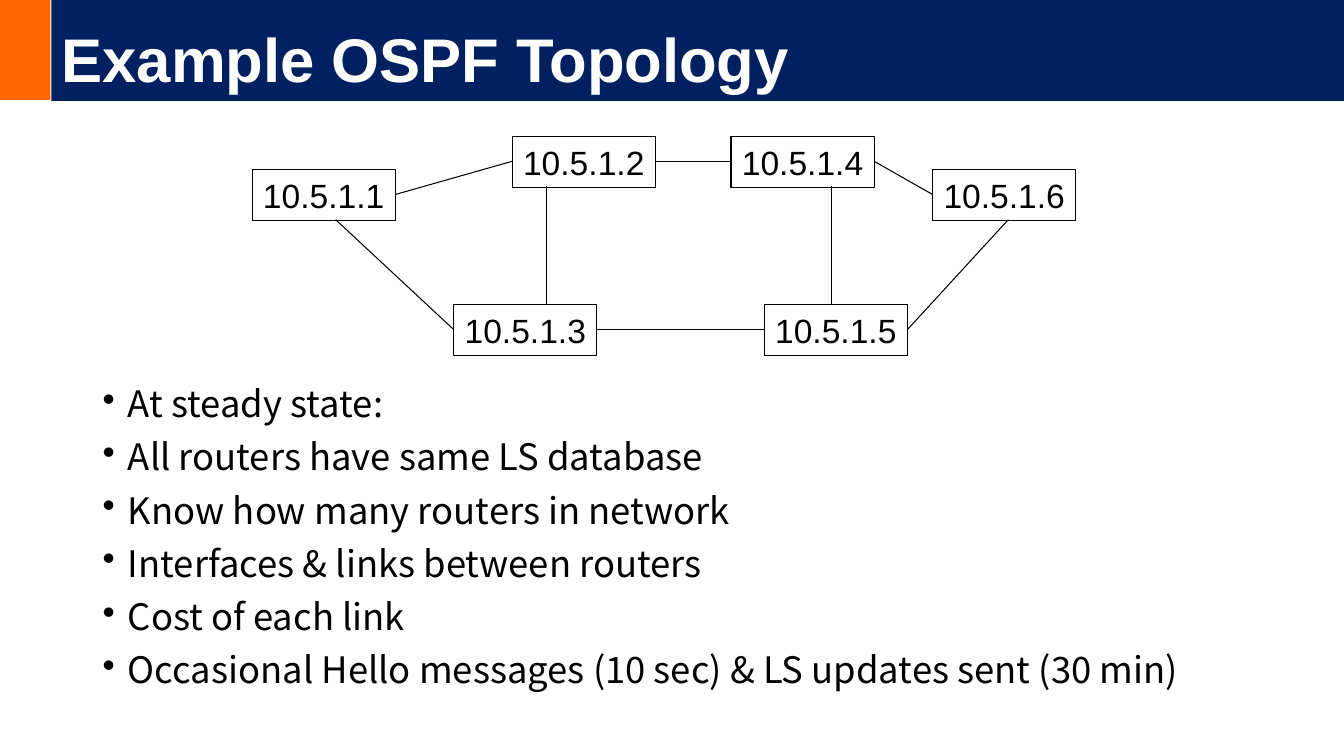
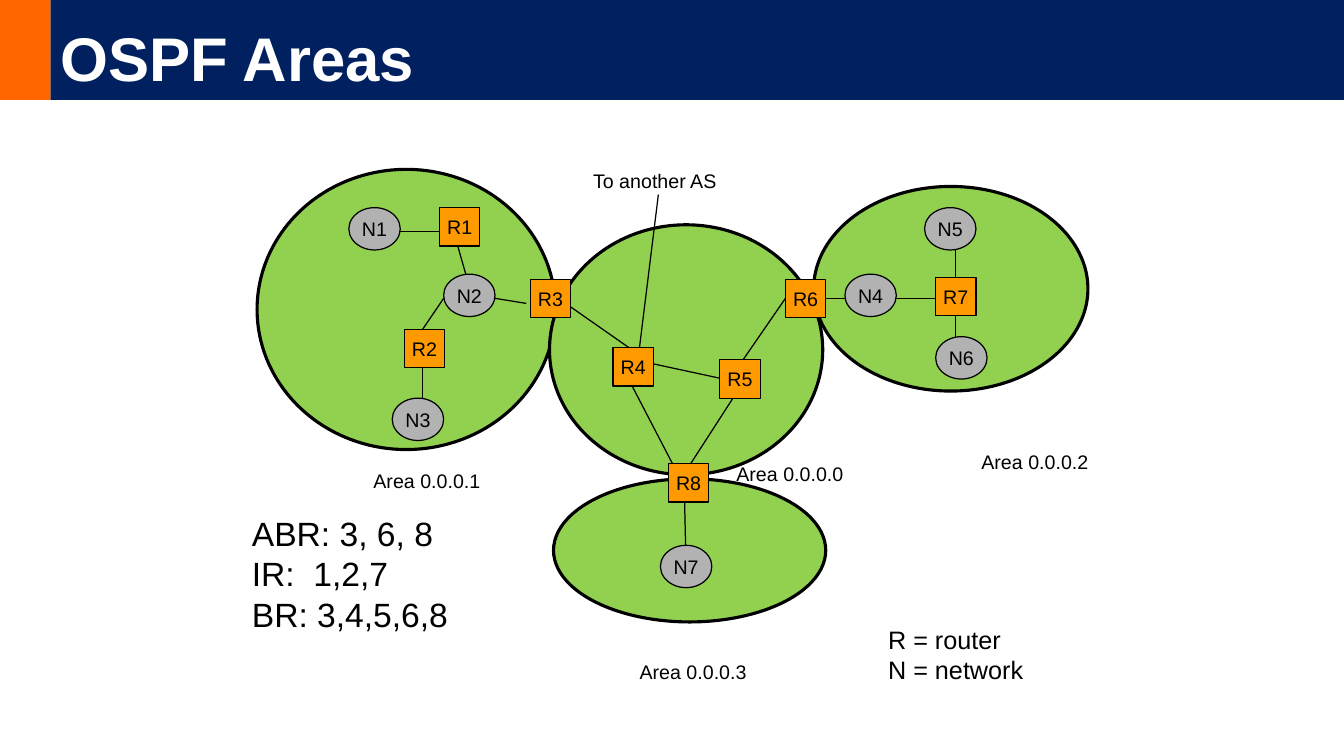
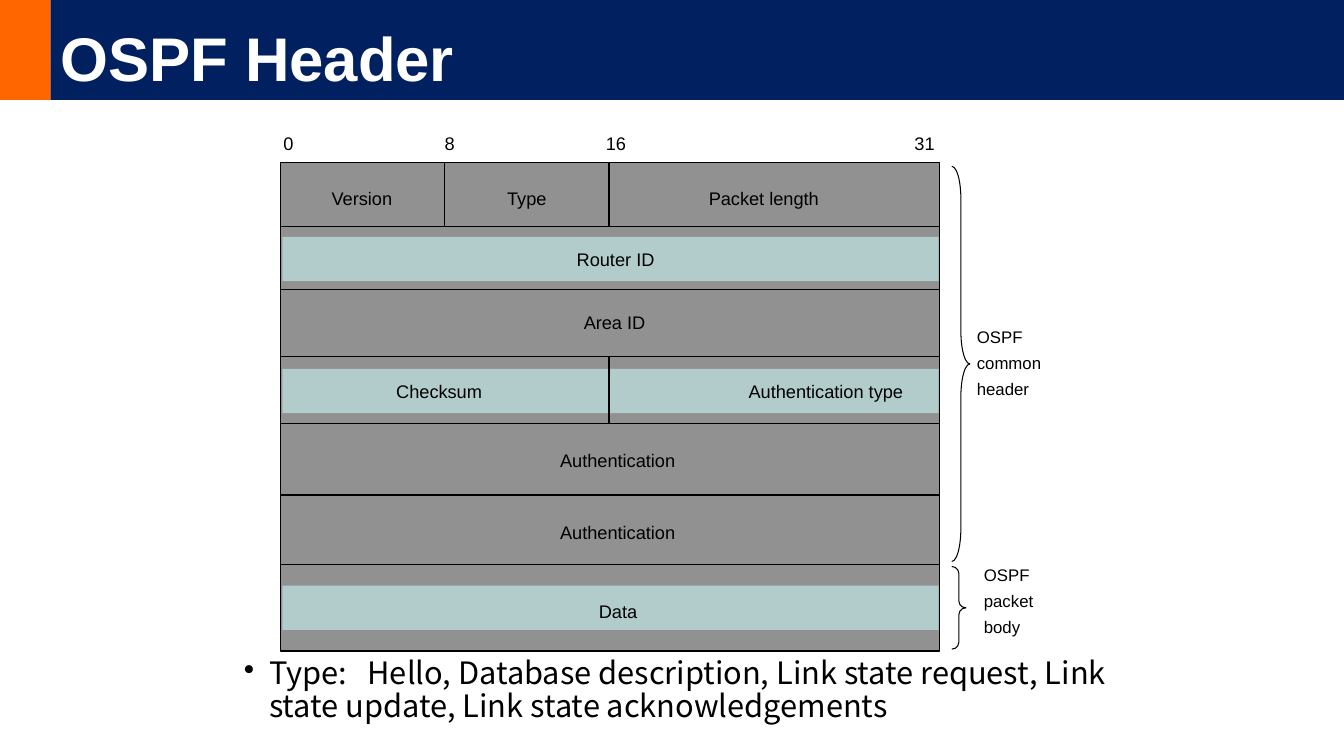
"""Build three slides on OSPF: topology, areas and packet header."""
from dataclasses import dataclass

from lxml import etree
from pptx import Presentation
from pptx import util as u
from pptx.dml.color import RGBColor
from pptx.enum import shapes, text
from pptx.oxml import ns

PX = 9144
TITLE_ONLY = 5
BOX = shapes.MSO_SHAPE.RECTANGLE
OVAL = shapes.MSO_SHAPE.OVAL
BRACE = shapes.MSO_SHAPE.RIGHT_BRACE
LEFT, CENTER = text.PP_ALIGN.LEFT, text.PP_ALIGN.CENTER
TOP, MIDDLE, BOTTOM = (text.MSO_ANCHOR.TOP, text.MSO_ANCHOR.MIDDLE,
                       text.MSO_ANCHOR.BOTTOM)


@dataclass(frozen=True)
class Theme:
    """Colours, fonts, type sizes and line widths."""
    accent: str = "FF6600"
    band: str = "002060"
    white: str = "FFFFFF"
    ink: str = "000000"
    area: str = "92D050"
    router: str = "FF9900"
    network: str = "B2B2B2"
    packet: str = "919191"
    strip: str = "B1CCCB"
    sans: str = "Arial"
    body: str = "Noto Sans CJK KR"
    title_pt: int = 44
    bullet_pt: int = 26
    note_pt: int = 22
    address_pt: int = 24
    legend_pt: int = 18
    label_pt: int = 14
    field_pt: int = 13
    brace_pt: int = 12
    thin: float = 0.75
    rule: float = 0.88
    bold_rule: float = 2.25


THEME = Theme()


def px(*lengths):
    """Turn px lengths into EMU."""
    return [u.Emu(length * PX) for length in lengths]


def write(frame, lines, size, color=THEME.ink, font=THEME.sans, align=LEFT,
          anchor=TOP, wrap=True, inset=True, bold=False, spacing=None,
          before=0):
    """Fill a text frame with one paragraph per line."""
    frame.auto_size = text.MSO_AUTO_SIZE.NONE
    frame.word_wrap = wrap
    frame.vertical_anchor = anchor
    if not inset:
        frame.margin_left = frame.margin_right = 0
        frame.margin_top = frame.margin_bottom = 0
    frame.text = "\n".join(lines)
    for paragraph in frame.paragraphs:
        paragraph.alignment = align
        paragraph.line_spacing = spacing
        paragraph.space_before = u.Pt(before)
        paragraph.font.name = font
        paragraph.font.size = u.Pt(size)
        paragraph.font.bold = bold
        paragraph.font.color.rgb = RGBColor.from_string(color)


def stroke(line, width):
    """Give a line its width and the ink colour."""
    line.width = u.Pt(width)
    line.color.rgb = RGBColor.from_string(THEME.ink)


def paint(shape, color):
    """Fill a shape with a colour, or leave it hollow."""
    if color:
        shape.fill.solid()
        shape.fill.fore_color.rgb = RGBColor.from_string(color)
    else:
        shape.fill.background()


def add_figure(slide, kind, place, color=None, width=None):
    """Add a preset shape without shadow."""
    figure = slide.shapes.add_shape(kind, *px(*place))
    figure.shadow.inherit = False
    paint(figure, color)
    if width:
        stroke(figure.line, width)
    else:
        figure.line.fill.background()
    return figure


def add_links(slide, links, width):
    """Add straight links given as x1, y1, x2, y2."""
    for ends in links:
        link = slide.shapes.add_connector(
            shapes.MSO_CONNECTOR.STRAIGHT, *px(*ends))
        stroke(link.line, width)
        etree.SubElement(link._element.spPr, ns.qn("a:effectLst"))


def add_text(slide, place, lines, size, **style):
    """Add a text box."""
    box = slide.shapes.add_textbox(*px(*place))
    write(box.text_frame, lines, size, **style)
    return box.text_frame


def add_labels(slide, labels, size, height):
    """Add one-line labels given as text, left, top, width."""
    for label, left, top, width in labels:
        add_text(slide, (left, top, width, height), [label], size,
                 align=CENTER, wrap=False, inset=False)


def add_bullets(slide, place, lines, size):
    """Add a bulleted list with hanging indents."""
    frame = add_text(slide, place, lines, size, font=THEME.body,
                     spacing=0.9, before=10)
    indent = px(25)[0]
    for paragraph in frame.paragraphs:
        properties = paragraph._p.get_or_add_pPr()
        properties.set("marL", str(indent))
        properties.set("indent", str(-indent))
        etree.SubElement(properties, ns.qn("a:buChar"), char="•")


def add_slide(deck, heading, band_left=50, band_height=99):
    """Add a slide with the accent block and title band."""
    slide = deck.slides.add_slide(deck.slide_layouts[TITLE_ONLY])
    add_figure(slide, BOX, (0, 0, 50, 99), THEME.accent)
    title = slide.shapes.title
    title.left, title.top, title.width, title.height = px(
        band_left, 0, 1283, band_height)
    paint(title, THEME.band)
    write(title.text_frame, [heading], THEME.title_pt, THEME.white,
          anchor=BOTTOM, bold=True, spacing=0.9)
    return slide


def build_topology(deck):
    """Draw six linked routers above the steady-state list."""
    slide = add_slide(deck, "Example OSPF Topology", 51, 100)
    routers = [(250, 168), (508, 135), (450, 302),
               (725, 135), (758, 302), (925, 168)]
    for number, (left, top) in enumerate(routers, 1):
        router = add_figure(slide, BOX, (left, top, 142, 51),
                            width=THEME.thin)
        write(router.text_frame, [f"10.5.1.{number}"], THEME.address_pt,
              align=CENTER, anchor=MIDDLE, wrap=False)
    add_links(slide, [
        (392, 193, 508, 160), (650, 160, 725, 160), (867, 160, 925, 193),
        (333, 218, 450, 327), (592, 327, 758, 327), (825, 185, 825, 302),
        (900, 327, 1000, 218), (542, 185, 542, 302),
    ], THEME.thin)
    add_bullets(slide, (92, 378, 1172, 325), [
        "At steady state:",
        "All routers have same LS database",
        "Know how many routers in network",
        "Interfaces & links between routers",
        "Cost of each link",
        "Occasional Hello messages (10 sec) & LS updates sent (30 min)",
    ], THEME.bullet_pt)


def add_nodes(slide, kind, size, color, nodes):
    """Add labelled nodes of one kind, given as name, left, top."""
    for name, left, top in nodes:
        node = add_figure(slide, kind, (left, top, *size), color, THEME.rule)
        write(node.text_frame, [name], THEME.label_pt, align=CENTER,
              anchor=MIDDLE, wrap=False, inset=False)


def build_areas(deck):
    """Draw four areas with their routers and networks."""
    slide = add_slide(deck, "OSPF Areas")
    for area in [(255, 168, 296, 278), (807, 185, 272, 203),
                 (545, 223, 271, 248), (549, 475, 270, 142)]:
        add_figure(slide, OVAL, area, THEME.area, THEME.bold_rule)
    add_links(slide, [
        (561, 301, 624, 345), (627, 383, 667, 460), (727, 395, 685, 460),
        (648, 361, 713, 375), (779, 296, 737, 357), (454, 244, 462, 272),
        (419, 327, 440, 296), (522, 301, 491, 296), (397, 230, 437, 230),
        (419, 365, 419, 395), (819, 296, 838, 296), (889, 296, 928, 296),
        (948, 275, 948, 248), (948, 313, 948, 334), (679, 497, 680, 543),
        (634, 347, 653, 193),
    ], THEME.rule)
    add_nodes(slide, BOX, (40, 38), THEME.router, [
        ("R1", 436, 206), ("R2", 401, 327), ("R3", 526, 277),
        ("R4", 608, 345), ("R5", 714, 357), ("R6", 779, 277),
        ("R7", 928, 275), ("R8", 663, 460),
    ])
    add_nodes(slide, OVAL, (51, 42), THEME.network, [
        ("N1", 346, 206), ("N2", 440, 272), ("N3", 389, 395),
        ("N4", 838, 272), ("N5", 917, 206), ("N6", 928, 334),
        ("N7", 655, 541),
    ])
    add_labels(slide, [
        ("Area 0.0.0.0", 730, 458, 107), ("Area 0.0.0.1", 370, 465, 107),
        ("Area 0.0.0.2", 973, 446, 107), ("Area 0.0.0.3", 634, 655, 107),
        ("To another AS", 588, 168, 123),
    ], THEME.label_pt, 24)
    add_text(slide, (240, 504, 230, 131),
             ["ABR: 3, 6, 8", "IR:  1,2,7", "BR: 3,4,5,6,8"],
             THEME.address_pt)
    add_text(slide, (871, 614, 159, 70), ["R = router", "N = network"],
             THEME.legend_pt, anchor=MIDDLE)


def build_header(deck):
    """Draw the packet header fields with their bit positions."""
    slide = add_slide(deck, "OSPF Header")
    left, top, right = 278, 161, 932
    add_figure(slide, BOX, (left, top, right - left, 485), THEME.packet,
               THEME.rule)
    for strip_top in (235, 366, 581):
        add_figure(slide, BOX, (280, strip_top, 651, 44), THEME.strip)
    add_links(slide, [(left, row, right, row)
                      for row in (225, 287, 354, 420, 491, 560)], THEME.rule)
    add_links(slide, [(441, top, 441, 225), (604, top, 604, 225),
                      (604, 354, 604, 420)], THEME.rule)
    add_labels(slide, [
        ("0", 281, 131, 10), ("8", 441, 131, 10),
        ("16", 601, 131, 20), ("31", 907, 131, 20),
        ("Version", 329, 186, 60), ("Type", 503, 186, 39),
        ("Packet length", 703, 186, 109),
        ("Router ID", 572, 246, 77), ("Area ID", 579, 309, 61),
        ("Checksum", 393, 377, 85), ("Authentication type", 742, 377, 154),
        ("Authentication", 555, 446, 115), ("Authentication", 555, 517, 115),
        ("Data", 594, 596, 38),
    ], THEME.field_pt, 22)
    for place, curl, note_place, note in [
        ((944, 165, 18, 392), 1.81, (959, 319, 90, 82),
         ["OSPF", "common", "header"]),
        ((944, 562, 14, 82), 0.49, (966, 555, 80, 82),
         ["OSPF", "packet", "body"]),
    ]:
        brace = add_figure(slide, BRACE, place, width=THEME.thin)
        brace.adjustments[0] = curl
        add_text(slide, note_place, note, THEME.brace_pt, before=4.3)
    add_bullets(slide, (232, 648, 934, 93), [
        "Type:   Hello, Database description, Link state request, "
        "Link state update, Link state acknowledgements",
    ], THEME.note_pt)


def main():
    """Build and save the deck."""
    deck = Presentation()
    deck.slide_width, deck.slide_height = px(1333, 750)
    build_topology(deck)
    build_areas(deck)
    build_header(deck)
    deck.save("out.pptx")


if __name__ == "__main__":
    main()
